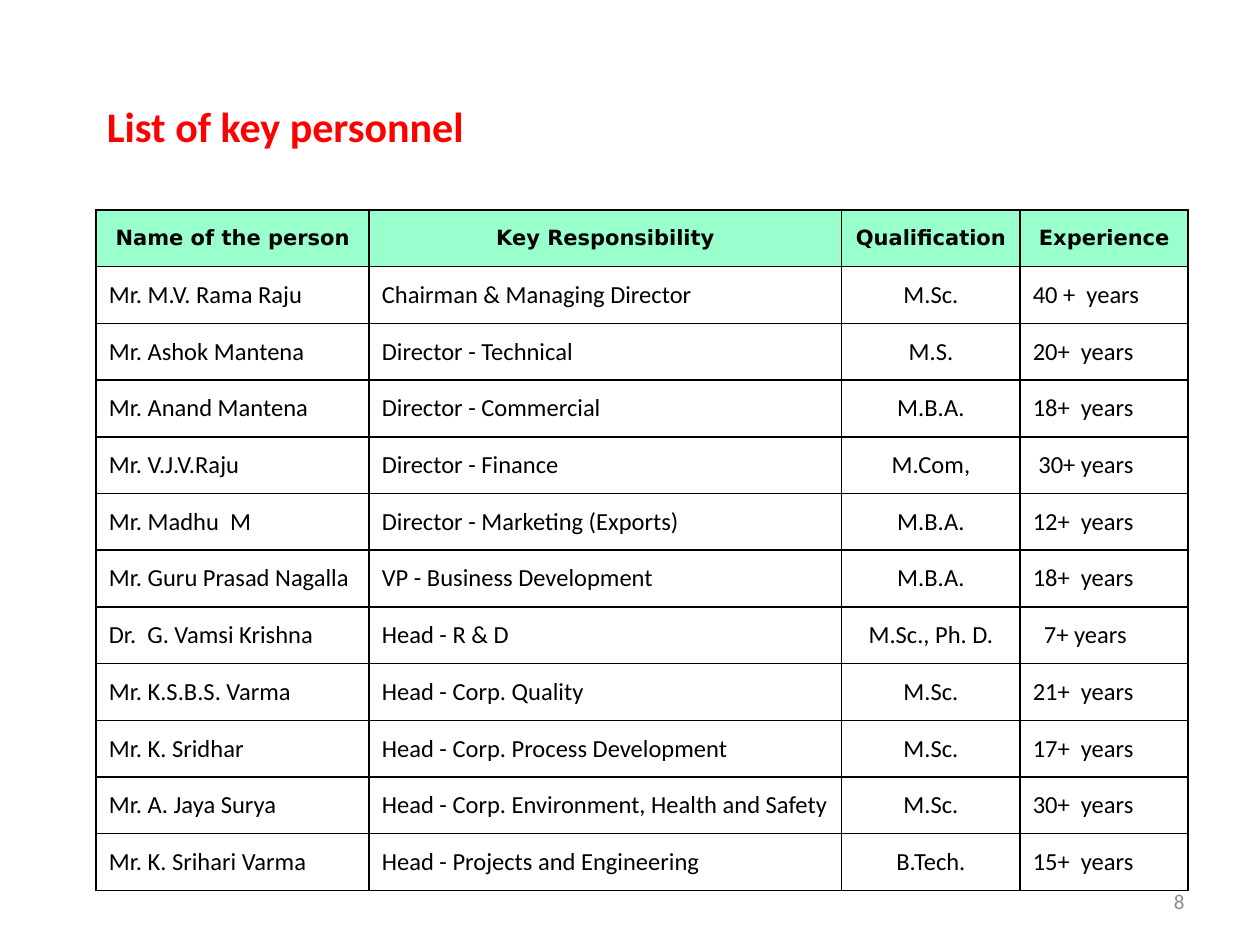
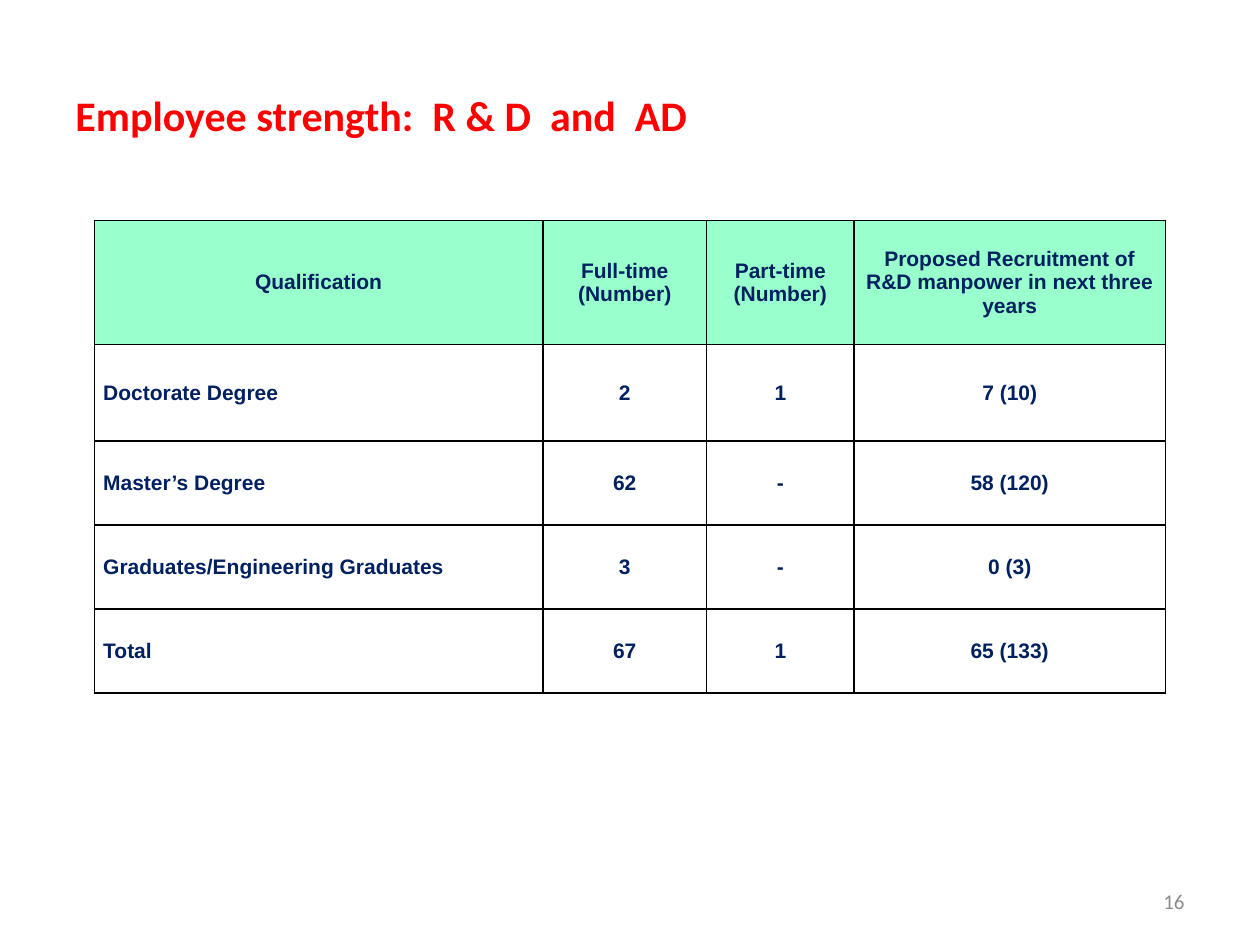
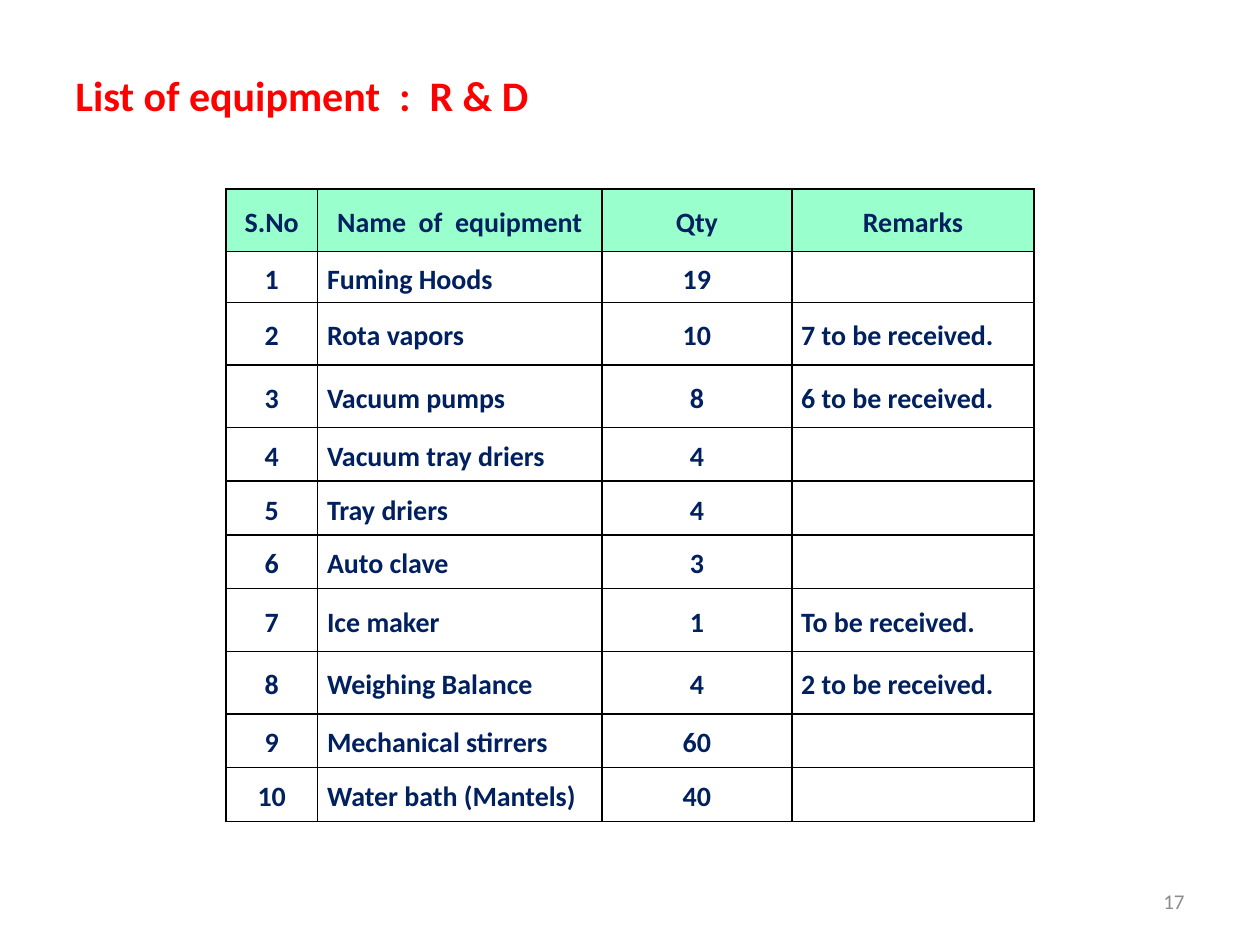
from dataclasses import dataclass

from lxml import etree
from pptx import Presentation
from pptx.dml.color import RGBColor as RGB
from pptx.enum.text import MSO_ANCHOR as Anchor, MSO_AUTO_SIZE as AutoSize, PP_ALIGN as Align
from pptx.oxml.ns import qn
from pptx.util import Pt


@dataclass(frozen=True)
class TextStyle:
    font: str
    size: float
    color: str
    bold: bool = False


@dataclass(frozen=True)
class TableStyle:
    header: TextStyle
    body: TextStyle
    margin_x: float
    margin_y: float = 0
    line_spacing: float = 1.0


class Theme:
    header_fill = "99FFCC"
    border = "000000"
    border_width = 1
    title = TextStyle("Calibri", 24, "FF0000", True)
    page_number = TextStyle("Calibri", 12, "8C8C8C")
    navy_small = TextStyle("Arial", 12, "002060", True)
    navy_large = TextStyle("Calibri", 16, "002060", True)
    personnel = TableStyle(TextStyle("DejaVu Sans", 12, "000000", True),
                           TextStyle("Calibri", 14, "000000"), 7.2, 3.6)
    strength = TableStyle(navy_small, navy_small, 5)
    equipment = TableStyle(navy_large, navy_large, 5.4, line_spacing=1.15)


ALIGNMENTS = {"L": Align.LEFT, "C": Align.CENTER, "R": Align.RIGHT}

PERSONNEL = [
    ("Name of the person", "Key Responsibility", "Qualification", "Experience"),
    ("Mr. M.V. Rama Raju", "Chairman & Managing Director", "M.Sc.", "40 +  years"),
    ("Mr. Ashok Mantena", "Director - Technical", "M.S.", "20+  years"),
    ("Mr. Anand Mantena", "Director - Commercial", "M.B.A.", "18+  years"),
    ("Mr. V.J.V.Raju", "Director - Finance", "M.Com,", "30+ years"),
    ("Mr. Madhu  M", "Director - Marketing (Exports)", "M.B.A.", "12+  years"),
    ("Mr. Guru Prasad Nagalla", "VP - Business Development", "M.B.A.", "18+  years"),
    ("Dr.  G. Vamsi Krishna", "Head - R & D", "M.Sc., Ph. D.", "7+ years"),
    ("Mr. K.S.B.S. Varma", "Head - Corp. Quality", "M.Sc.", "21+  years"),
    ("Mr. K. Sridhar", "Head - Corp. Process Development", "M.Sc.", "17+  years"),
    ("Mr. A. Jaya Surya", "Head - Corp. Environment, Health and Safety", "M.Sc.", "30+  years"),
    ("Mr. K. Srihari Varma", "Head - Projects and Engineering", "B.Tech.", "15+  years"),
]
EXPERIENCE_COLUMN = 3
EXPERIENCE_INDENTS = {4: 3.2, 7: 6.4}

STRENGTH = [
    ("Qualification", "Full-time (Number)", "Part-time (Number)",
     "Proposed Recruitment of R&D manpower in next three years"),
    ("Doctorate Degree", "2", "1", "7 (10)"),
    ("Master’s Degree", "62", "-", "58 (120)"),
    ("Graduates/Engineering Graduates", "3", "-", "0 (3)"),
    ("Total", "67", "1", "65 (133)"),
]

EQUIPMENT = [
    ("S.No", "Name  of  equipment", "Qty", "Remarks"),
    ("1", "Fuming Hoods", "19", ""),
    ("2", "Rota vapors", "10", "7 to be received."),
    ("3", "Vacuum pumps", "8", "6 to be received."),
    ("4", "Vacuum tray driers", "4", ""),
    ("5", "Tray driers", "4", ""),
    ("6", "Auto clave", "3", ""),
    ("7", "Ice maker", "1", "To be received."),
    ("8", "Weighing Balance", "4", "2 to be received."),
    ("9", "Mechanical stirrers", "60", ""),
    ("10", "Water bath (Mantels)", "40", ""),
    ("", "", "", ""),
]


def style_text(frame, style, align=Align.LEFT, line_spacing=1.0):
    for paragraph in frame.paragraphs:
        paragraph.alignment = align
        if line_spacing != 1.0:
            paragraph.line_spacing = line_spacing
        for run in paragraph.runs:
            run.font.name = style.font
            run.font.size = Pt(style.size)
            run.font.bold = style.bold
            run.font.color.rgb = RGB.from_string(style.color)


def add_text(slide, text, left, top, width, height, style, align=Align.LEFT):
    frame = slide.shapes.add_textbox(Pt(left), Pt(top), Pt(width), Pt(height)).text_frame
    frame.word_wrap = True
    frame.text = text
    style_text(frame, style, align)
    return frame


def add_title(slide, text, left, top, width):
    title = add_text(slide, text, left, top, width, 36, Theme.title)
    title.auto_size = AutoSize.SHAPE_TO_FIT_TEXT


def add_page_number(slide, number):
    page = add_text(slide, str(number), 516, 500.5, 168, 28.75, Theme.page_number, Align.RIGHT)
    page.vertical_anchor = Anchor.MIDDLE


def set_borders(cell, sides):
    """Draw the given sides (L, R, T, B) and clear the others."""
    properties = cell._tc.get_or_add_tcPr()
    for side in "LRTB":
        line = etree.SubElement(properties, qn(f"a:ln{side}"), w=str(Pt(Theme.border_width)))
        if side in sides:
            fill = etree.SubElement(line, qn("a:solidFill"))
            etree.SubElement(fill, qn("a:srgbClr"), val=Theme.border)
        else:
            etree.SubElement(line, qn("a:noFill"))


def fill_cell(cell, text, text_style, align, table_style):
    cell.margin_left = cell.margin_right = Pt(table_style.margin_x)
    cell.margin_top = cell.margin_bottom = Pt(table_style.margin_y)
    cell.vertical_anchor = Anchor.MIDDLE
    cell.text_frame.text = text
    style_text(cell.text_frame, text_style, align, table_style.line_spacing)


def add_grid(slide, rows, left, top, widths, heights, column_aligns, style):
    """Add a table with a centred header; a row without text keeps only its top border."""
    table = slide.shapes.add_table(len(rows), len(widths), Pt(left), Pt(top),
                                   Pt(sum(widths)), Pt(sum(heights))).table
    table.first_row = table.horz_banding = False
    for column, width in zip(table.columns, widths):
        column.width = Pt(width)
    for row, height in zip(table.rows, heights):
        row.height = Pt(height)
    for r, texts in enumerate(rows):
        for c, text in enumerate(texts):
            cell = table.cell(r, c)
            set_borders(cell, "LRTB" if any(texts) else "T")
            if r == 0:
                cell.fill.solid()
                cell.fill.fore_color.rgb = RGB.from_string(Theme.header_fill)
                fill_cell(cell, text, style.header, Align.CENTER, style)
            else:
                cell.fill.background()
                fill_cell(cell, text, style.body, ALIGNMENTS[column_aligns[c]], style)
    return table


def add_personnel_slide(slide):
    add_page_number(slide, 8)
    add_title(slide, "List of key personnel", 54, 54, 240)
    table = add_grid(slide, PERSONNEL, 55, 120, (156, 270, 102, 96),
                     [32.4] * len(PERSONNEL), "LLCL", Theme.personnel)
    for row, indent in EXPERIENCE_INDENTS.items():
        table.cell(row, EXPERIENCE_COLUMN).margin_left = Pt(Theme.personnel.margin_x + indent)


def add_strength_slide(slide):
    add_title(slide, "Employee strength:  R & D  and  AD", 36, 47.5, 378)
    add_page_number(slide, 16)
    add_grid(slide, STRENGTH, 54, 126, (256.2, 93.6, 84.2, 178),
             (71, 55, 48, 48, 48), "LCCC", Theme.strength)


def add_equipment_slide(slide):
    add_title(slide, "List of equipment  :  R & D", 36, 36, 360)
    add_page_number(slide, 17)
    tall, short = 35.75, 30.75
    heights = (tall, 29, tall, tall, short, short, short, tall, tall, short, short, short)
    add_grid(slide, EQUIPMENT, 129, 108, (52.5, 162.5, 108.5, 138.5),
             heights, "CLCL", Theme.equipment)


def main():
    deck = Presentation()
    deck.slide_width, deck.slide_height = Pt(720), Pt(540)
    blank = deck.slide_layouts[6]
    for build in (add_personnel_slide, add_strength_slide, add_equipment_slide):
        build(deck.slides.add_slide(blank))
    deck.save("out.pptx")


if __name__ == "__main__":
    main()
